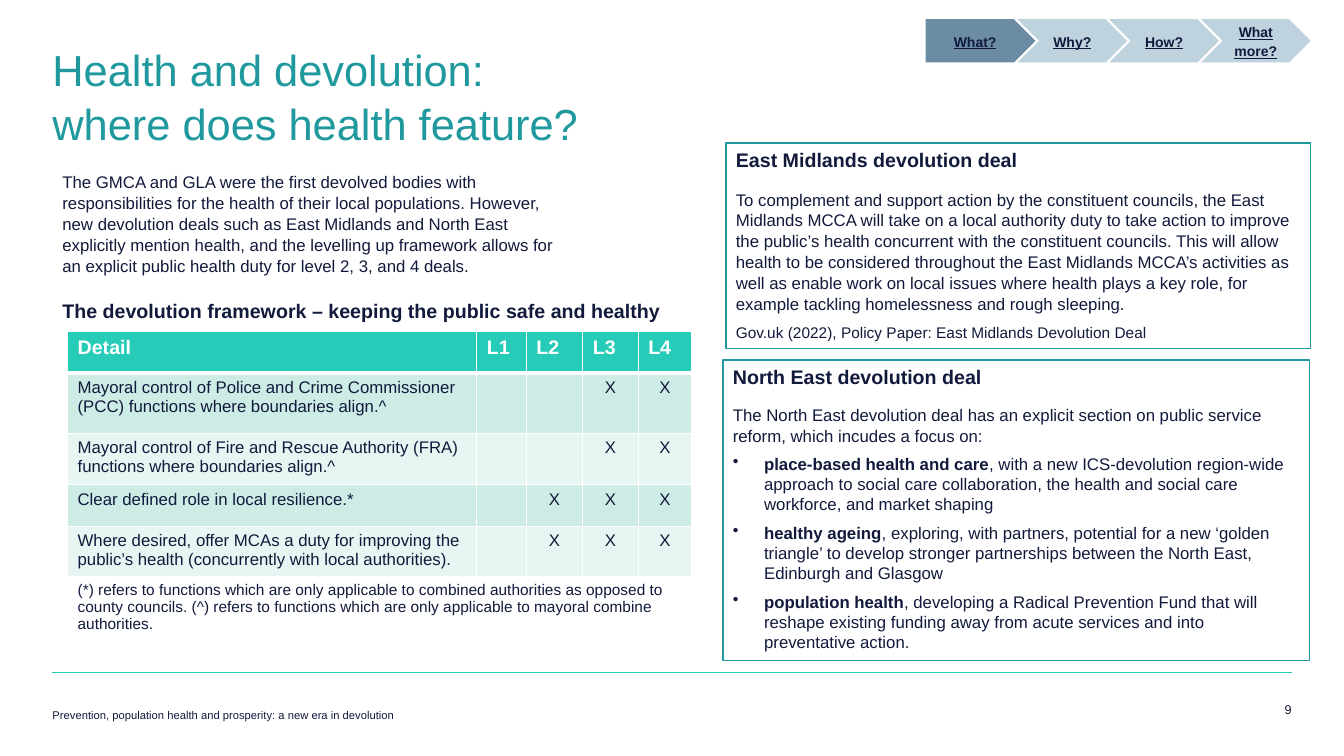
from dataclasses import dataclass

from lxml import etree
from pptx import Presentation
from pptx import util as u
from pptx.dml.color import RGBColor
from pptx.enum import shapes, text
from pptx.oxml import ns


@dataclass(frozen=True)
class Theme:
    font: str = "Arial"
    ink: str = "121A3C"
    nav_ink: str = "11193D"
    teal: str = "1F999E"
    bright: str = "26CCB8"
    white: str = "FFFFFF"
    bands: tuple = ("CDECE6", "E8F6F3")
    nav_on: str = "6B8CA3"
    nav_off: str = "BFD3DE"
    title: float = 31
    heading: float = 14
    body: float = 12
    small: float = 11
    nav: float = 10
    page: float = 9
    footer: float = 8


class SlideBuilder:
    """Holds the theme and the slide being built."""

    def __init__(self, slide, theme):
        self.slide, self.theme = slide, theme

    def place(self, shape, box):
        for side, value in zip(("left", "top", "width", "height"), box):
            setattr(shape, side, u.Inches(value))

    def paragraph(self, paragraph, runs, size, color=None, bullet=False, bold=False,
                  underline=None, **layout):
        for name, value in layout.items():
            setattr(paragraph, name, value)
        if bullet:
            props = paragraph._p.get_or_add_pPr()
            props.set("marL", str(u.Inches(0.31)))
            props.set("indent", str(u.Inches(-0.31)))
            etree.SubElement(props, ns.qn("a:buChar")).set("char", "•")
        for wording, strong in [(runs, bold)] if isinstance(runs, str) else runs:
            run = paragraph.add_run()
            run.text = wording
            style = {"name": self.theme.font, "size": u.Pt(size), "bold": strong,
                     "underline": underline}
            for name, value in style.items():
                setattr(run.font, name, value)
            run.font.color.rgb = RGBColor.from_string(color or self.theme.ink)

    def fill_text(self, frame, paragraphs, inset=None, anchor=text.MSO_ANCHOR.TOP):
        frame.word_wrap = True
        frame.vertical_anchor = anchor
        if inset is not None:
            for side in ("left", "top", "right", "bottom"):
                setattr(frame, f"margin_{side}", u.Inches(inset))
        for i, content in enumerate(paragraphs):
            target = frame.add_paragraph() if i else frame.paragraphs[0]
            self.paragraph(target, **content)

    def title(self, box, **content):
        heading = self.slide.shapes.title
        self.place(heading, box)
        self.fill_text(heading.text_frame, [content], inset=0)
        heading.text_frame.auto_size = text.MSO_AUTO_SIZE.NONE

    def text_box(self, box, paragraphs, inset=None):
        frame = self.slide.shapes.add_textbox(*map(u.Inches, box)).text_frame
        self.fill_text(frame, paragraphs, inset)

    def shape(self, kind, box, paragraphs, fill=None, line=None, parent=None, **frame):
        shape = (parent or self.slide).shapes.add_shape(kind, *map(u.Inches, box))
        shape.shadow.inherit = False
        if fill:
            shape.fill.solid()
            shape.fill.fore_color.rgb = RGBColor.from_string(fill)
        else:
            shape.fill.background()
        if line:
            shape.line.color.rgb = RGBColor.from_string(line)
            shape.line.width = u.Pt(1)
        else:
            shape.line.fill.background()
        self.fill_text(shape.text_frame, paragraphs, **frame)

    def rule(self, left, right, y, color, width):
        rule = self.slide.shapes.add_connector(
            shapes.MSO_CONNECTOR.STRAIGHT, *map(u.Inches, (left, y, right, y)))
        rule.line.color.rgb = RGBColor.from_string(color)
        rule.line.width = u.Pt(width)
        etree.SubElement(rule._element.spPr, ns.qn("a:effectLst"))

    def cell(self, cell, content, fill, bottom=1):
        props = cell._tc.get_or_add_tcPr()
        for side, width in {"L": 1, "R": 1, "T": 1, "B": bottom}.items():
            border = etree.SubElement(props, ns.qn(f"a:ln{side}"), w=str(u.Pt(width)))
            solid = etree.SubElement(border, ns.qn("a:solidFill"))
            etree.SubElement(solid, ns.qn("a:srgbClr"), val=self.theme.white)
        cell.fill.solid()
        cell.fill.fore_color.rgb = RGBColor.from_string(fill)
        if content:
            self.paragraph(cell.text_frame.paragraphs[0], **content)

    def framework_table(self, left, top, widths, heights, header, duties, footnote):
        t = self.theme
        table = self.slide.shapes.add_table(
            len(heights), len(widths), *map(u.Inches, (left, top, sum(widths), sum(heights)))).table
        table.horz_banding = False
        for column, width in zip(table.columns, widths):
            column.width = u.Inches(width)
        for row, height in zip(table.rows, heights):
            row.height = u.Inches(height)
        for c, label in enumerate(header):
            self.cell(table.cell(0, c), dict(runs=label, size=t.heading, color=t.white, bold=True),
                      t.bright, bottom=3)
        for r, (duty, first_level) in enumerate(duties, 1):
            band = t.bands[(r - 1) % 2]
            self.cell(table.cell(r, 0), dict(runs=duty, size=t.body), band)
            for level in range(1, len(header)):
                mark = dict(runs="X", size=t.body, alignment=text.PP_ALIGN.CENTER)
                self.cell(table.cell(r, level), mark if level >= first_level else None, band)
        last = len(heights) - 1
        table.cell(last, 0).merge(table.cell(last, len(widths) - 1))
        self.cell(table.cell(last, 0), dict(runs=footnote, size=t.small), t.white)


def main():
    t = Theme()
    deck = Presentation()
    deck.slide_width, deck.slide_height = u.Inches(13.33), u.Inches(7.5)
    page = SlideBuilder(deck.slides.add_slide(deck.slide_layouts[5]), t)
    margin = 0.52

    # Title and introduction
    page.rule(margin, 12.81, 6.67, t.bright, 0.75)
    page.title((margin, 0.41, 5.3, 1.13), runs="Health and devolution: where does health feature?",
               size=t.title, color=t.teal, alignment=text.PP_ALIGN.LEFT, line_spacing=1.04)
    page.text_box((margin, 1.65, 5.11, 1.14), [dict(
        runs="The GMCA and GLA were the first devolved bodies with responsibilities for the health of "
             "their local populations. However, new devolution deals such as East Midlands and North "
             "East explicitly mention health, and the levelling up framework allows for an explicit "
             "public health duty for level 2, 3, and 4 deals.",
        size=t.body, line_spacing=u.Pt(15))])

    # Devolution deals
    after_heading, after_body = u.Pt(12), u.Pt(6)
    priorities = [
        ("place-based health and care", ", with a new ICS-devolution region-wide approach to social "
         "care collaboration, the health and social care workforce, and market shaping"),
        ("healthy ageing", ", exploring, with partners, potential for a new ‘golden triangle’ to "
         "develop stronger partnerships between the North East, Edinburgh and Glasgow"),
        ("population health", ", developing a Radical Prevention Fund that will reshape existing "
         "funding away from acute services and into preventative action."),
    ]
    north_east = [
        dict(runs="The North East devolution deal has an explicit section on public service reform, "
                  "which incudes a focus on:", size=t.body, space_after=after_body),
        *(dict(runs=[(name, True), (detail, False)], size=t.body, bullet=True,
               space_after=after_body) for name, detail in priorities),
    ]
    east_midlands = [
        dict(runs="To complement and support action by the constituent councils, the East Midlands "
                  "MCCA will take on a local authority duty to take action to improve the public’s "
                  "health concurrent with the constituent councils. This will allow health to be "
                  "considered throughout the East Midlands MCCA’s activities as well as enable work "
                  "on local issues where health plays a key role, for example tackling homelessness "
                  "and rough sleeping.",
             size=t.body, line_spacing=u.Pt(15), space_after=after_body),
        dict(runs="Gov.uk (2022), Policy Paper: East Midlands Devolution Deal", size=t.small),
    ]
    for region, box, details in (("North East", (7.17, 3.57, 5.82, 2.98), north_east),
                                 ("East Midlands", (7.2, 1.42, 5.8, 2.04), east_midlands)):
        heading = dict(runs=f"{region} devolution deal", size=t.heading, bold=True,
                       space_after=after_heading)
        paragraphs = [dict(p, alignment=text.PP_ALIGN.LEFT) for p in (heading, *details)]
        page.shape(shapes.MSO_SHAPE.RECTANGLE, box, paragraphs, line=t.teal)

    # Section navigation
    navigation = page.slide.shapes.add_group_shape()
    for i, section in enumerate(("What?", "Why?", "How?", "What more?")):
        kind = shapes.MSO_SHAPE.CHEVRON if i else shapes.MSO_SHAPE.PENTAGON
        label = dict(runs=section, size=t.nav, color=t.nav_ink, bold=True, underline=True,
                     alignment=text.PP_ALIGN.CENTER, line_spacing=1.1)
        page.shape(kind, (9.18 + 0.91 * i, 0.19, 1.09, 0.43), [label],
                   fill=t.nav_off if i else t.nav_on, parent=navigation,
                   inset=0.1, anchor=text.MSO_ANCHOR.MIDDLE)

    # Devolution framework: each duty with the first level it applies to
    page.framework_table(
        0.67, 3.29, (4.06, 0.49, 0.56, 0.55, 0.53), (0.41, 0.6, 0.51, 0.41, 0.5, 0.63),
        ("Detail", "L1", "L2", "L3", "L4"),
        [("Mayoral control of Police and Crime Commissioner (PCC) functions where boundaries align.^", 3),
         ("Mayoral control of Fire and Rescue Authority (FRA) functions where boundaries align.^", 3),
         ("Clear defined role in local resilience.*", 2),
         ("Where desired, offer MCAs a duty for improving the public’s health (concurrently with "
          "local authorities).", 2)],
        "(*) refers to functions which are only applicable to combined authorities as opposed to county "
        "councils. (^) refers to functions which are only applicable to mayoral combine authorities.")
    page.text_box((margin, 2.92, 6.14, 0.34), [dict(
        runs="The devolution framework – keeping the public safe and healthy",
        size=t.heading, bold=True)])

    # Footer
    page.text_box((margin, 7.04, 4.49, 0.49), [dict(
        runs="Prevention, population health and prosperity: a new era in devolution",
        size=t.footer, line_spacing=0.9, space_after=after_body)], inset=0)
    page.text_box((11.93, 6.96, 0.88, 0.24), [dict(
        runs="9", size=t.page, alignment=text.PP_ALIGN.RIGHT)], inset=0)

    deck.save("out.pptx")


if __name__ == "__main__":
    main()
